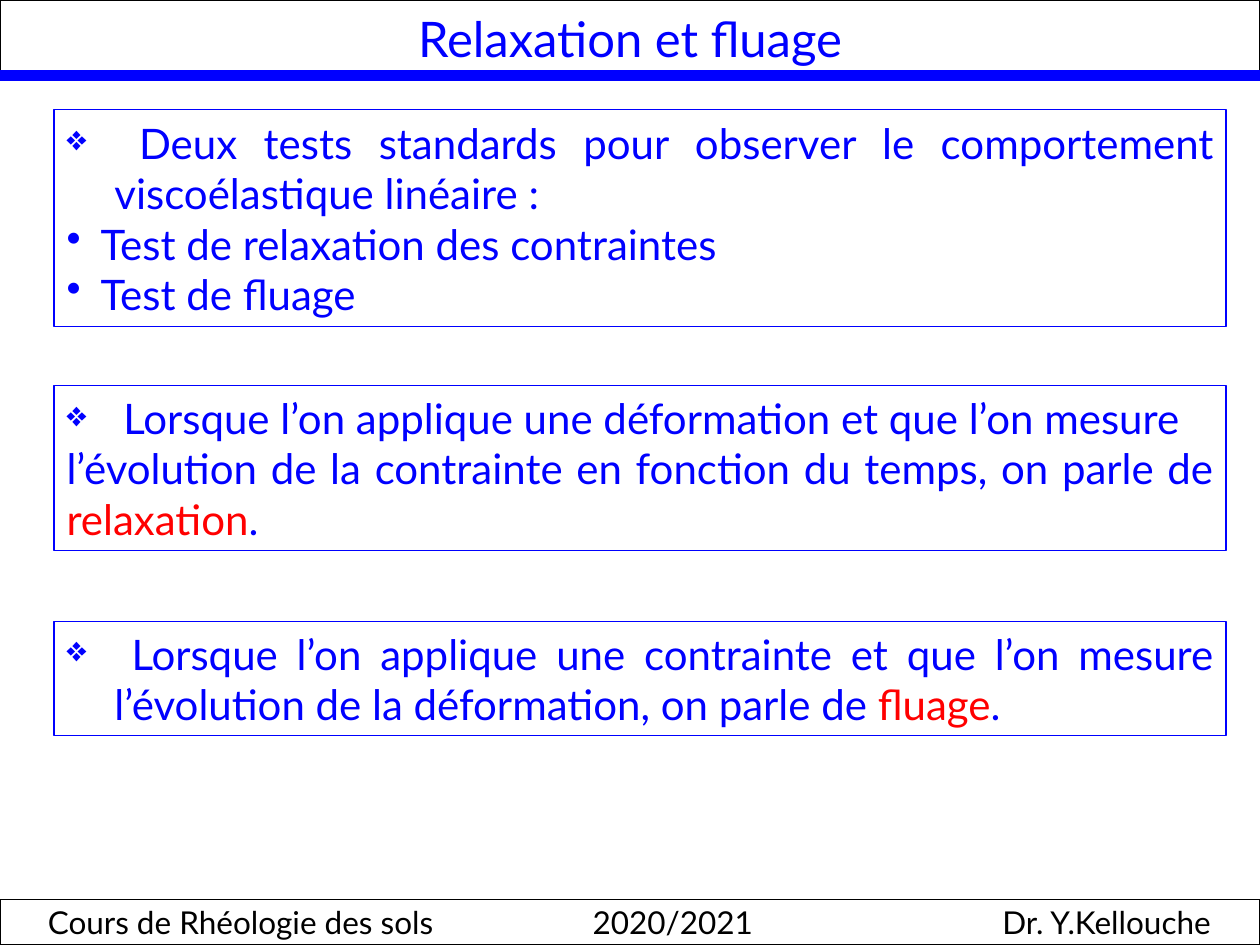
import lxml.etree
import pptx
import pptx.dml.color
import pptx.enum.shapes
import pptx.enum.text
import pptx.oxml.ns
import pptx.util

Inches = pptx.util.Inches
Align = pptx.enum.text.PP_ALIGN

THEME = {
    "font": "Lato",
    "blue": "0000FF", "red": "FF0000", "black": "000000", "white": "FFFFFF",
    "title": 28, "body": 24, "marker": 20, "footer": 18,
}

# Content
TITLE = "Relaxation et fluage"
FOOTER = ["Cours de Rhéologie des sols", "2020/2021", "Dr. Y.Kellouche"]

# A run is (text, color, size); a paragraph is (bullet, runs)
MARKER = (" ", "blue", "marker")


def body(text, color="blue"):
    return (text, color, "body")


BOXES = [  # top, height, paragraphs
    (0.87, 1.72, [
        ("❖", [MARKER, body("Deux tests standards pour observer le comportement "
                            "viscoélastique linéaire :")]),
        ("•", [body("Test de relaxation des contraintes")]),
        ("•", [body("Test de fluage")]),
    ]),
    (3.06, 1.31, [
        ("❖", [MARKER, body("Lorsque l’on applique une déformation et que l’on mesure")]),
        (None, [body("l’évolution de la contrainte en fonction du temps, on parle de "),
                body("relaxation", "red"), body(".")]),
    ]),
    (4.93, 0.91, [
        ("❖", [MARKER, body("Lorsque l’on applique une contrainte et que l’on mesure "
                            "l’évolution de la déformation, on parle de "),
               body("fluage", "red"), body(".")]),
    ]),
]

# Layout in inches
WIDTH, HEIGHT = 10, 7.5
BOX_LEFT, BOX_WIDTH = 0.43, 9.3
TITLE_HEIGHT, FOOTER_HEIGHT = 0.6, 0.36
FOOTER_INSET = 0.38
FOOTER_TABS = [("ctr", 4.96), ("r", 9.23)]
BULLET_INDENTS = {"❖": 0.38, "•": 0.27}


def rgb(name):
    return pptx.dml.color.RGBColor.from_string(THEME[name])


def add_child(parent, tag, **attributes):
    return lxml.etree.SubElement(parent, pptx.oxml.ns.qn(tag), **attributes)


def add_box(slide, left, top, width, height, line, line_width):
    shape = slide.shapes.add_shape(
        pptx.enum.shapes.MSO_SHAPE.RECTANGLE,
        Inches(left), Inches(top), Inches(width), Inches(height))
    shape.shadow.inherit = False
    shape.fill.solid()
    shape.fill.fore_color.rgb = rgb("white")
    shape.line.color.rgb = rgb(line)
    shape.line.width = pptx.util.Pt(line_width)
    shape.text_frame.word_wrap = True
    shape.text_frame.vertical_anchor = pptx.enum.text.MSO_ANCHOR.MIDDLE
    return shape


def write(paragraph, runs, align=Align.LEFT, bullet=None, tabs=()):
    paragraph.alignment = align
    properties = paragraph._p.get_or_add_pPr()
    if bullet:
        indent = Inches(BULLET_INDENTS[bullet])
        properties.set("marL", str(indent))
        properties.set("indent", str(-indent))
        add_child(properties, "a:buChar", char=bullet)
    if tabs:
        tab_list = add_child(properties, "a:tabLst")
        for kind, position in tabs:
            add_child(tab_list, "a:tab", pos=str(Inches(position)), algn=kind)
    for text, color, size in runs:
        run = paragraph.add_run()
        run.text = text
        run.font.name = THEME["font"]
        run.font.size = pptx.util.Pt(THEME[size])
        run.font.color.rgb = rgb(color)


def main():
    presentation = pptx.Presentation()
    presentation.slide_width = Inches(WIDTH)
    presentation.slide_height = Inches(HEIGHT)
    slide = presentation.slides.add_slide(presentation.slide_layouts[6])

    # Title band and rule
    title = add_box(slide, 0, 0, WIDTH, TITLE_HEIGHT, "black", 1.5)
    write(title.text_frame.paragraphs[0], [(TITLE, "blue", "title")], align=Align.CENTER)
    rule = slide.shapes.add_connector(
        pptx.enum.shapes.MSO_CONNECTOR.STRAIGHT,
        0, Inches(TITLE_HEIGHT), Inches(WIDTH), Inches(TITLE_HEIGHT))
    rule.line.color.rgb = rgb("blue")
    rule.line.width = pptx.util.Pt(6)
    add_child(rule._element.spPr, "a:effectLst")

    # Text boxes
    for top, height, paragraphs in BOXES:
        frame = add_box(slide, BOX_LEFT, top, BOX_WIDTH, height, "blue", 0.75).text_frame
        frame.auto_size = pptx.enum.text.MSO_AUTO_SIZE.SHAPE_TO_FIT_TEXT
        for index, (bullet, runs) in enumerate(paragraphs):
            paragraph = frame.add_paragraph() if index else frame.paragraphs[0]
            write(paragraph, runs, align=Align.JUSTIFY, bullet=bullet)

    # Footer: left, centred and right parts on tab stops
    footer = add_box(slide, 0, HEIGHT - FOOTER_HEIGHT, WIDTH, FOOTER_HEIGHT, "black", 0.75)
    footer.text_frame.margin_left = Inches(FOOTER_INSET)
    write(footer.text_frame.paragraphs[0],
          [("\t".join(FOOTER), "black", "footer")], tabs=FOOTER_TABS)

    presentation.save("out.pptx")


if __name__ == "__main__":
    main()
